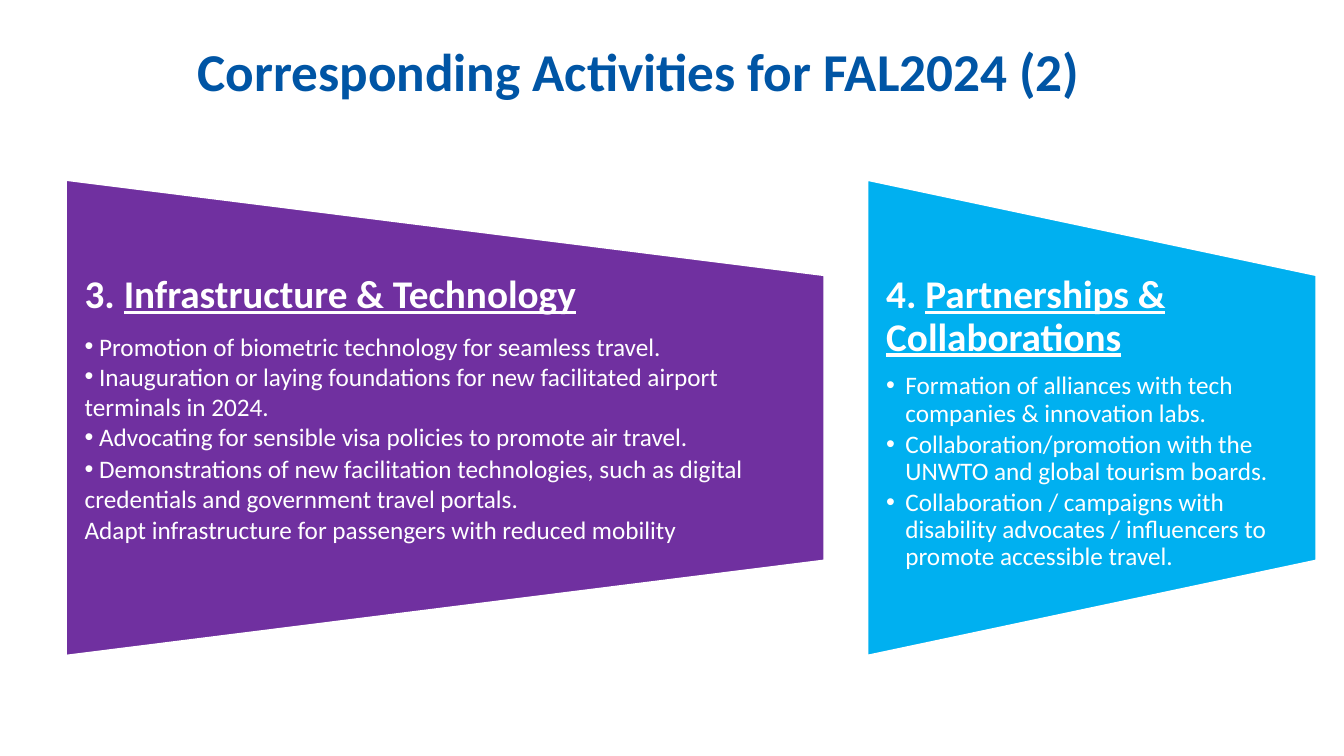
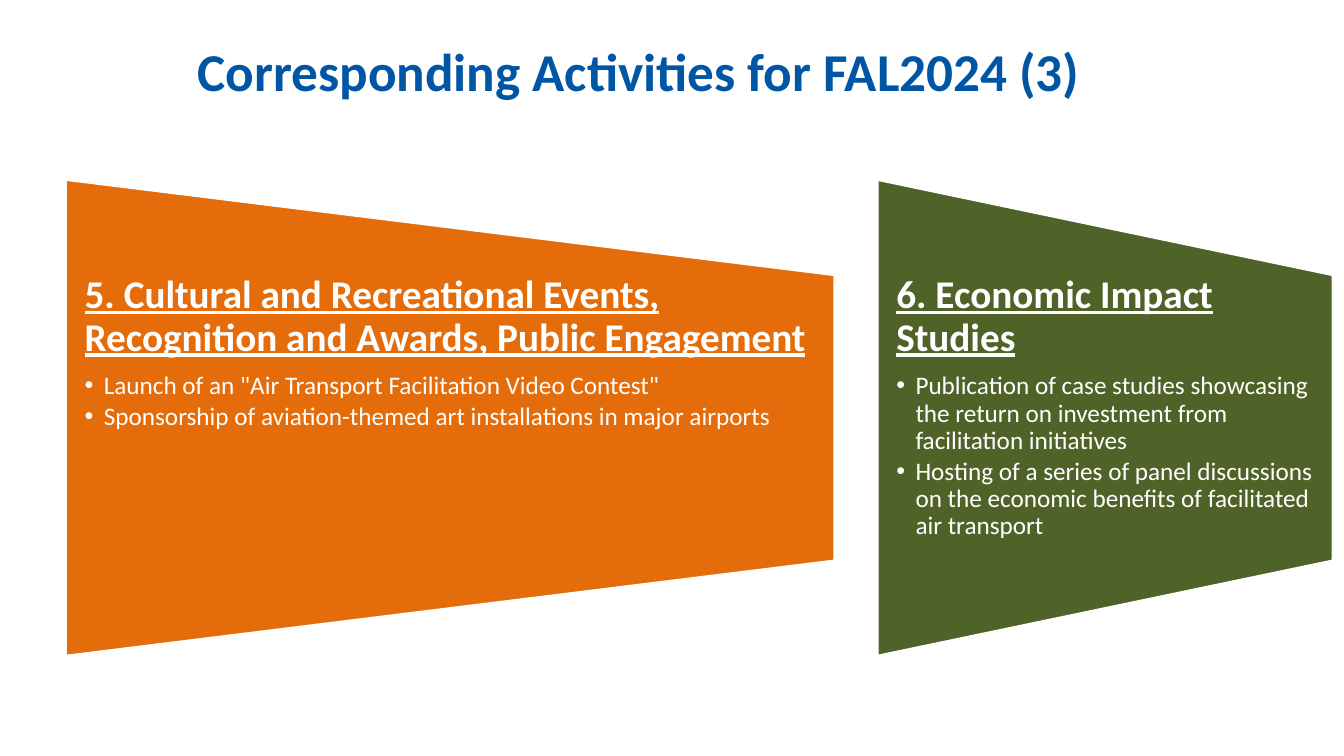
import dataclasses

import lxml.etree
import pptx
import pptx.dml.color
import pptx.enum.shapes
import pptx.enum.text
import pptx.oxml.ns
import pptx.util

Inches = pptx.util.Inches
Pt = pptx.util.Pt


@dataclasses.dataclass(frozen=True)
class Theme:
    font: str = "Calibri"
    bullet_font: str = "Arial"
    title_color: str = "0055A5"
    white: str = "FFFFFF"
    purple: str = "7030A0"
    cyan: str = "00B0F0"
    orange: str = "E46C0A"
    olive: str = "4F6228"
    title_size: int = 38
    heading_size: int = 28
    body_size: int = 18


THEME = Theme()
NO_BREAK_SPACE = chr(160)

TITLE_BOX = (0.14, 0.3, 12.4, 0.74)
PANEL_LEFT, PANEL_TOP, PANEL_HEIGHT, PANEL_GAP = 0.65, 1.78, 4.73, 0.42
PANEL_SLOPE = 0.2  # share of the height lost at the top and the bottom of the right side
INDENT = 0.19

# Paragraph styles: hanging bullets, bullets that wrap to the margin, plain text
HANGING = {"bullet": True, "indent": INDENT, "spacing": 0.9, "after": 0.15, "lead": ""}
LOOSE = {"bullet": True, "indent": 0, "spacing": 1.0, "after": 0, "lead": NO_BREAK_SPACE}
LOOSE_SPACED = {**LOOSE, "after": 0.07}
PLAIN = {**LOOSE, "bullet": False, "lead": ""}

SLIDES = [
    ("Corresponding Activities for FAL2024 (2)", [
        (7.53, THEME.purple, "3. ", "Infrastructure & Technology", [
            (LOOSE, "Promotion of biometric technology for seamless travel."),
            (LOOSE, "Inauguration or laying foundations for new facilitated airport terminals in 2024."),
            (LOOSE_SPACED, "Advocating for sensible visa policies to promote air travel."),
            (LOOSE, "Demonstrations of new facilitation technologies, such as digital credentials "
                    "and government travel portals."),
            (PLAIN, "Adapt infrastructure for passengers with reduced mobility"),
        ]),
        (4.46, THEME.cyan, "4. ", "Partnerships & Collaborations", [
            (HANGING, "Formation of alliances with tech companies & innovation labs."),
            (HANGING, "Collaboration/promotion with the UNWTO and global tourism boards."),
            (HANGING, "Collaboration / campaigns with disability advocates / influencers "
                      "to promote accessible travel."),
        ]),
    ]),
    ("Corresponding Activities for FAL2024 (3)", [
        (7.63, THEME.orange, "", "5. Cultural and Recreational Events, Recognition and Awards, Public Engagement", [
            (HANGING, 'Launch of an "Air Transport Facilitation Video Contest"'),
            (HANGING, "Sponsorship of aviation-themed art installations in major airports"),
        ]),
        (4.52, THEME.olive, "", "6. Economic Impact Studies", [
            (HANGING, "Publication of case studies showcasing the return on investment "
                      "from facilitation initiatives"),
            (HANGING, "Hosting of a series of panel discussions on the economic benefits "
                      "of facilitated air transport"),
        ]),
    ]),
]


def rgb(color):
    return pptx.dml.color.RGBColor.from_string(color)


def set_attributes(target, values):
    for name, value in values.items():
        setattr(target, name, value)


def add_run(paragraph, text, size, color=THEME.white, bold=False, underline=False):
    run = paragraph.add_run()
    run.text = text
    set_attributes(run.font, {"name": THEME.font, "size": Pt(size), "bold": bold, "underline": underline})
    run.font.color.rgb = rgb(color)


def add_bullet(paragraph, indent):
    properties = paragraph._p.get_or_add_pPr()
    properties.set("marL", str(Inches(indent)))
    properties.set("indent", str(-Inches(indent)))
    for tag, name, value in (("a:buFont", "typeface", THEME.bullet_font), ("a:buChar", "char", "•")):
        lxml.etree.SubElement(properties, pptx.oxml.ns.qn(tag)).set(name, value)


def add_title(slide, text):
    title = slide.shapes.title
    left, top, width, height = map(Inches, TITLE_BOX)
    set_attributes(title, {"left": left, "top": top, "width": width, "height": height})
    set_attributes(title.text_frame, {
        "word_wrap": True,
        "auto_size": pptx.enum.text.MSO_AUTO_SIZE.NONE,
        "vertical_anchor": pptx.enum.text.MSO_ANCHOR.TOP,
    })
    paragraph = title.text_frame.paragraphs[0]
    set_attributes(paragraph, {"alignment": pptx.enum.text.PP_ALIGN.CENTER, "line_spacing": 1.04})
    add_run(paragraph, text, THEME.title_size, THEME.title_color, bold=True)


def add_trapezoid(slide, left, top, width, height, color):
    """Draw the panel outline: a manual-operation shape turned so its wide side is on the left."""
    shape = slide.shapes.add_shape(
        pptx.enum.shapes.MSO_SHAPE.FLOWCHART_MANUAL_OPERATION,
        Inches(left + (width - height) / 2), Inches(top + (height - width) / 2),
        Inches(height), Inches(width))
    shape.rotation = 270
    shape.shadow.inherit = False
    shape.fill.solid()
    shape.fill.fore_color.rgb = rgb(color)
    shape.line.color.rgb = rgb(THEME.white)
    shape.line.width = Pt(2)


def add_panel(slide, left, top, width, height, color, number, heading, items):
    add_trapezoid(slide, left, top, width, height, color)
    text_box = slide.shapes.add_textbox(
        Inches(left), Inches(top + PANEL_SLOPE * height),
        Inches(width), Inches(height * (1 - 2 * PANEL_SLOPE)))
    frame = text_box.text_frame
    set_attributes(frame, {
        "word_wrap": True,
        "margin_left": Inches(INDENT), "margin_right": Inches(INDENT),
        "margin_top": 0, "margin_bottom": 0,
    })
    paragraph = frame.paragraphs[0]
    set_attributes(paragraph, {"line_spacing": 0.9, "space_after": Pt(0.35 * THEME.heading_size)})
    if number:
        add_run(paragraph, number, THEME.heading_size, bold=True)
    add_run(paragraph, heading, THEME.heading_size, bold=True, underline=True)

    for style, text in items:
        paragraph = frame.add_paragraph()
        if style["bullet"]:
            add_bullet(paragraph, style["indent"])
        set_attributes(paragraph, {
            "line_spacing": style["spacing"],
            "space_after": Pt(style["after"] * THEME.body_size),
        })
        add_run(paragraph, style["lead"] + text, THEME.body_size)


def add_activity_slide(presentation, title, panels):
    slide = presentation.slides.add_slide(presentation.slide_layouts[5])
    left = PANEL_LEFT
    for width, *content in panels:
        add_panel(slide, left, PANEL_TOP, width, PANEL_HEIGHT, *content)
        left += width + PANEL_GAP
    add_title(slide, title)


def main():
    presentation = pptx.Presentation()
    presentation.slide_width = Inches(13.33)
    presentation.slide_height = Inches(7.5)
    for title, panels in SLIDES:
        add_activity_slide(presentation, title, panels)
    presentation.save("out.pptx")


if __name__ == "__main__":
    main()
